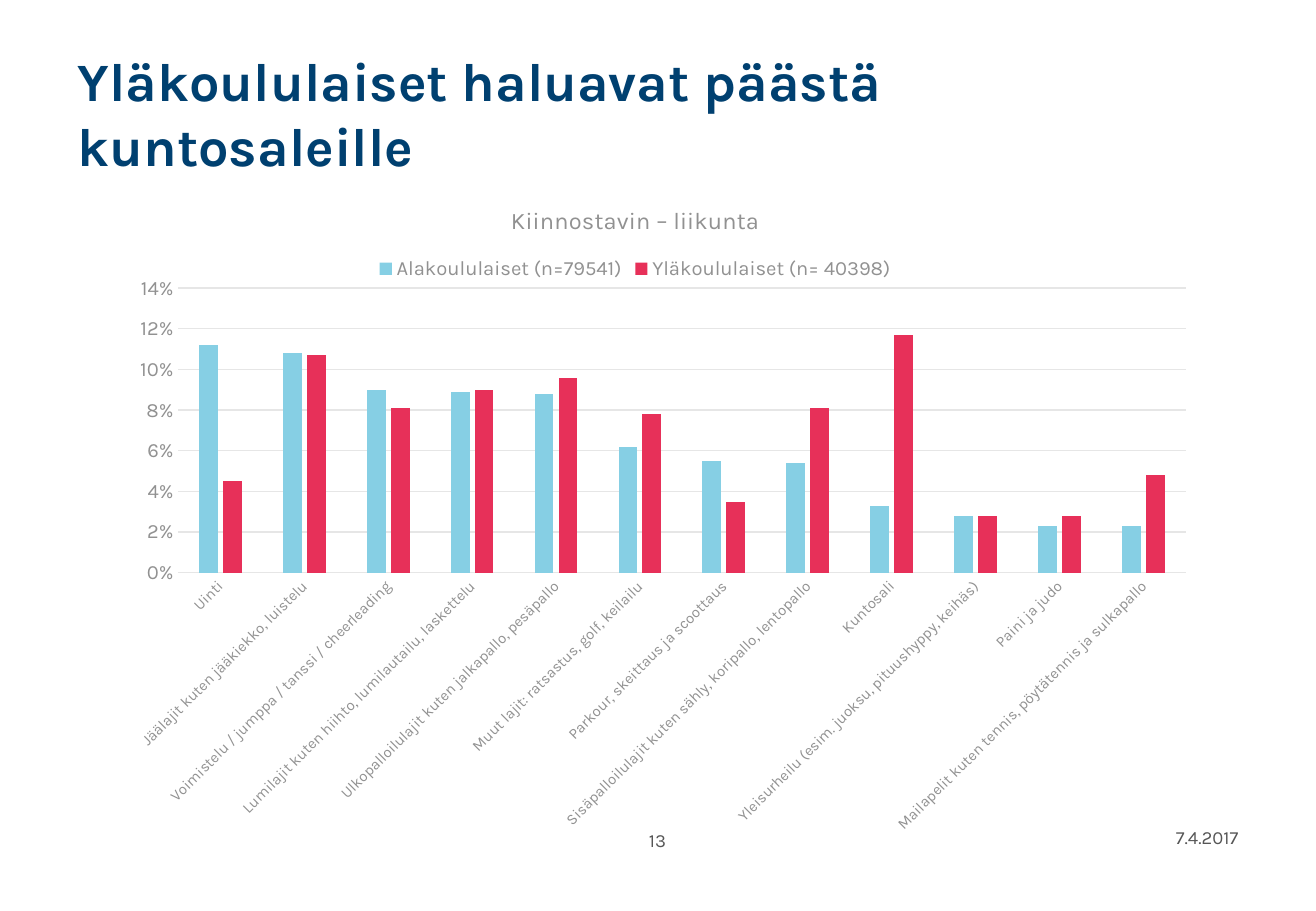
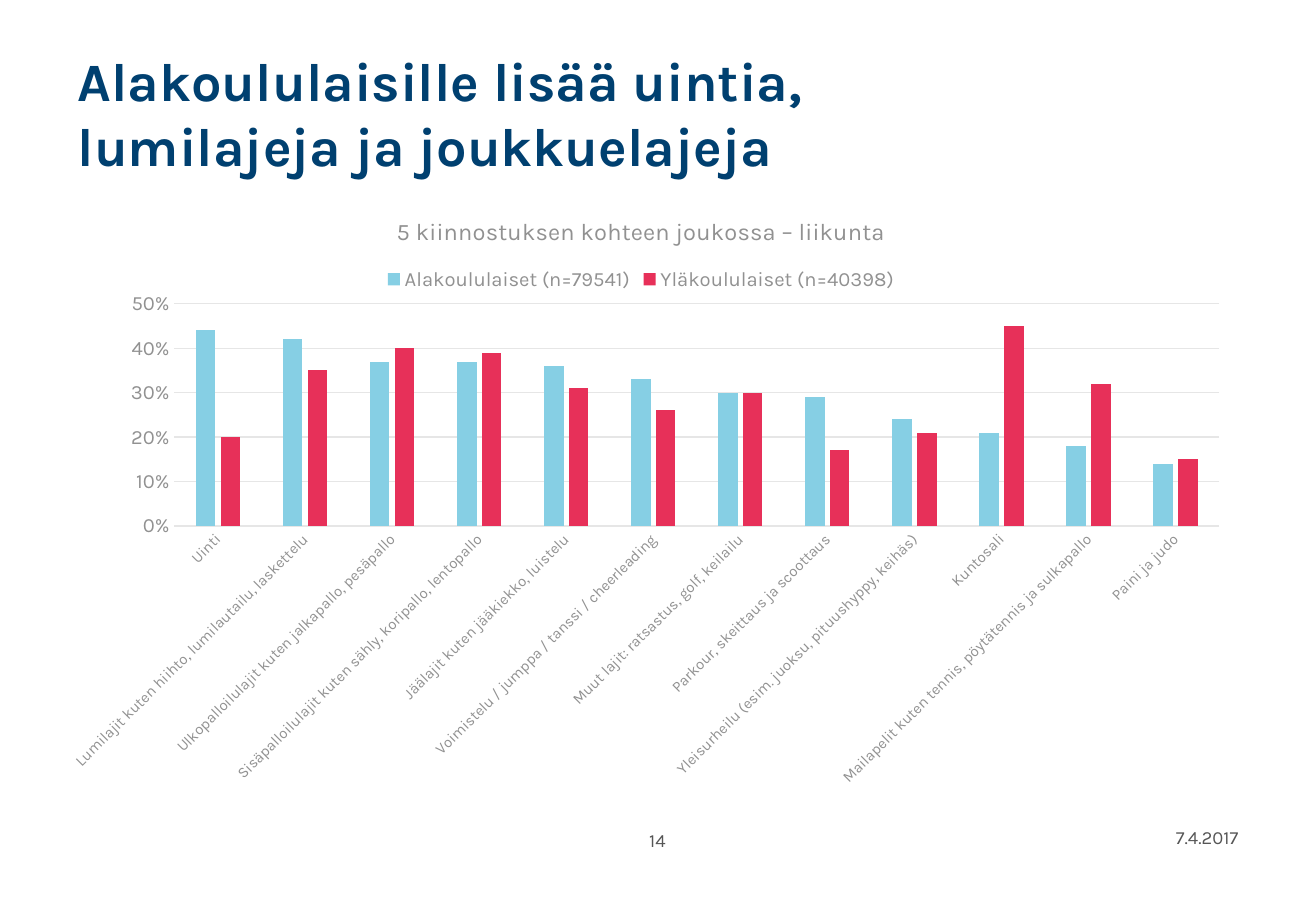
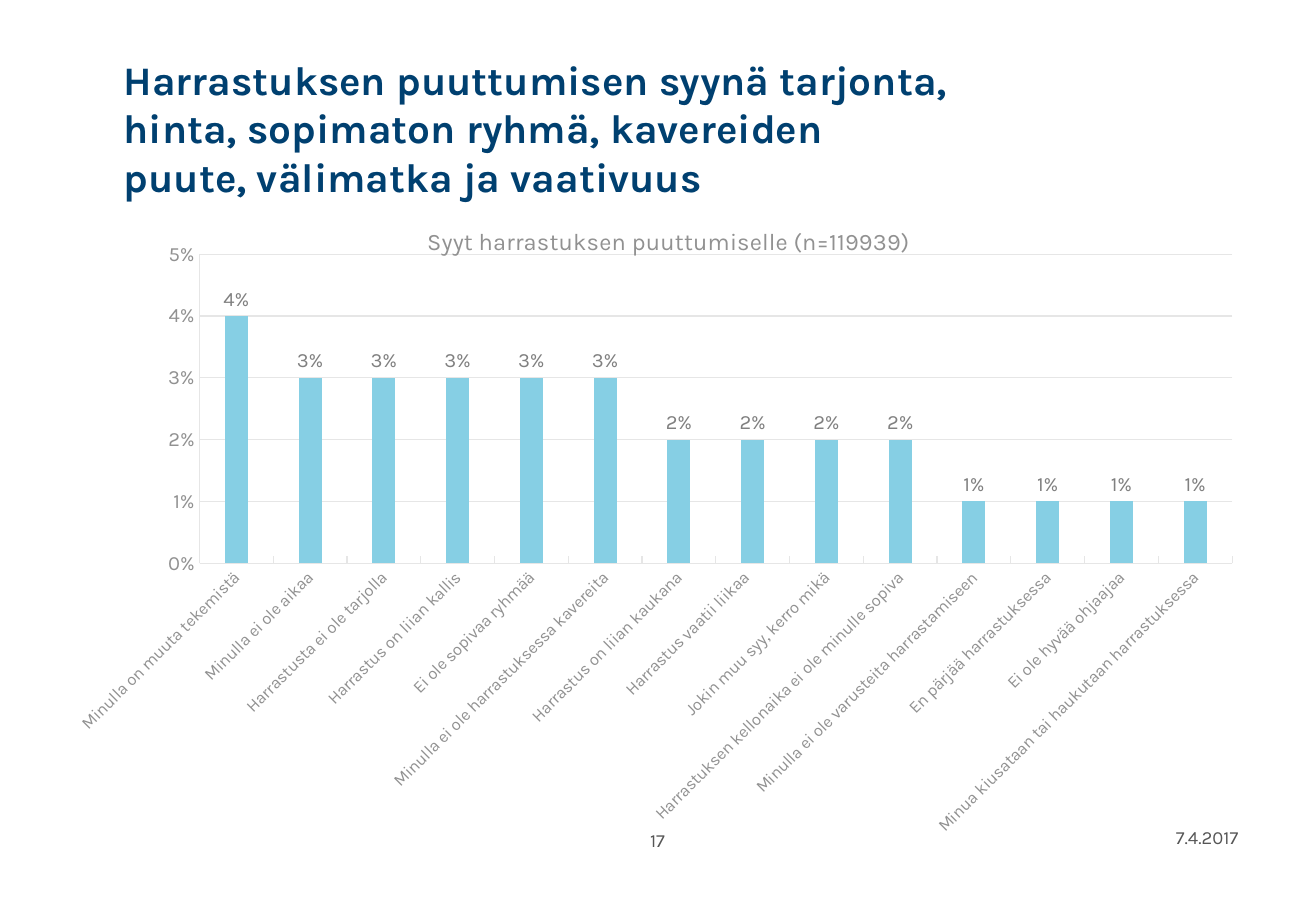
"""Build three slides of bar charts on the sports and hobbies of pupils."""
from dataclasses import dataclass
from typing import NamedTuple

from lxml import etree
from pptx import Presentation
from pptx.chart import axis as ax, chart as ch, data as cd
from pptx.dml import color, line as ln
from pptx.enum import chart as ec, text
from pptx.oxml import ns
from pptx.slide import Slide
from pptx.text import text as tx
from pptx.util import Cm, Pt


@dataclass(frozen=True)
class Theme:
    font: str = "Karla"
    navy: str = "004070"
    dark: str = "565656"
    gray: str = "919191"
    label: str = "808080"
    rule: str = "E6E6E6"
    bars: tuple[str, ...] = ("86CFE4", "E73059")
    head: int = 14
    value: int = 12
    foot: int = 11
    base: int = 10


class Box(NamedTuple):
    left: float
    top: float
    width: float
    height: float

    def lengths(self) -> list[Cm]:
        return [Cm(side) for side in self]


class Sport(NamedTuple):
    name: str
    first: tuple[float, float]
    top: tuple[float, float]


@dataclass(frozen=True)
class Graph:
    head: str
    box: Box
    plot: Box
    names: list[str]
    series: dict[str, list[float]]
    peak: float
    step: float
    size: int = 9
    single: bool = False


@dataclass(frozen=True)
class Page:
    title: str
    number: str
    graph: Graph
    box: Box = Box(1.37, 0.76, 19.25, 3.18)
    size: int = 32


THEME = Theme()
DATE = "7.4.2017"
NUMBER_BOX = Box(10.53, 17.2, 6.43, 1.02)
DATE_BOX = Box(19.71, 17.15, 6.43, 1.02)

SPORTS = [
    Sport("Uinti", (0.112, 0.045), (0.44, 0.2)),
    Sport("Jäälajit kuten jääkiekko, luistelu", (0.108, 0.107), (0.36, 0.31)),
    Sport("Voimistelu / jumppa / tanssi / cheerleading", (0.09, 0.081), (0.33, 0.26)),
    Sport("Lumilajit kuten hiihto, lumilautailu, laskettelu", (0.089, 0.09), (0.42, 0.35)),
    Sport("Ulkopalloilulajit kuten jalkapallo, pesäpallo", (0.088, 0.096), (0.37, 0.4)),
    Sport("Muut lajit: ratsastus, golf, keilailu", (0.062, 0.078), (0.3, 0.3)),
    Sport("Parkour, skeittaus ja scoottaus", (0.055, 0.035), (0.29, 0.17)),
    Sport("Sisäpalloilulajit kuten sähly, koripallo, lentopallo", (0.054, 0.081), (0.37, 0.39)),
    Sport("Kuntosali", (0.033, 0.117), (0.21, 0.45)),
    Sport("Yleisurheilu (esim. juoksu, pituushyppy, keihäs)", (0.028, 0.028), (0.24, 0.21)),
    Sport("Paini ja judo", (0.023, 0.028), (0.14, 0.15)),
    Sport("Mailapelit kuten tennis, pöytätennis ja sulkapallo", (0.023, 0.048), (0.18, 0.32)),
]
RANKED = sorted(SPORTS, key=lambda sport: -sport.top[0])

REASONS = {
    "Minulla on muuta tekemistä": 0.04,
    "Minulla ei ole aikaa": 0.03,
    "Harrastusta ei ole tarjolla": 0.03,
    "Harrastus on liian kallis": 0.03,
    "Ei ole sopivaa ryhmää": 0.03,
    "Minulla ei ole harrastuksessa kavereita": 0.03,
    "Harrastus on liian kaukana": 0.02,
    "Harrastus vaatii liikaa\n": 0.02,
    "Jokin muu syy, kerro mikä": 0.02,
    "Harrastuksen kellonaika ei ole minulle sopiva": 0.02,
    "Minulla ei ole varusteita harrastamiseen": 0.01,
    "En pärjää harrastuksessa": 0.01,
    "Ei ole hyvää ohjaajaa": 0.01,
    "Minua kiusataan tai haukutaan harrastuksessa": 0.01,
}

PAGES = [
    Page(
        "Yläkoululaiset haluavat päästä kuntosaleille", "13",
        Graph(
            "Kiinnostavin – liikunta",
            Box(1.37, 3.79, 23.82, 13.97), Box(0.099, 0.16, 0.884, 0.426),
            [sport.name for sport in SPORTS],
            {"Alakoululaiset (n=79541)": [sport.first[0] for sport in SPORTS],
             "Yläkoululaiset (n= 40398)": [sport.first[1] for sport in SPORTS]},
            peak=0.14, step=0.02,
        ),
    ),
    Page(
        "Alakoululaisille lisää uintia, lumilajeja ja joukkuelajeja", "14",
        Graph(
            "5 kiinnostuksen kohteen joukossa – liikunta",
            Box(0.99, 4.01, 24.82, 13.87), Box(0.107, 0.169, 0.88, 0.335),
            [sport.name for sport in RANKED],
            {"Alakoululaiset (n=79541)": [sport.top[0] for sport in RANKED],
             "Yläkoululaiset (n=40398)": [sport.top[1] for sport in RANKED]},
            peak=0.5, step=0.1,
        ),
    ),
    Page(
        "Harrastuksen puuttumisen syynä tarjonta, hinta, sopimaton ryhmä, "
        "kavereiden puute, välimatka ja vaativuus", "17",
        Graph(
            "Syyt harrastuksen puuttumiselle (n=119939) ",
            Box(1.19, 4.24, 25.7, 13.61), Box(0.116, 0.079, 0.84, 0.475),
            list(REASONS), {"Series 1": list(REASONS.values())},
            peak=0.05, step=0.01, size=10, single=True,
        ),
        Box(2.33, 1.08, 17.78, 3.18), 24,
    ),
]


def style(font: tx.Font, size: int, tint: str, bold: bool = False) -> None:
    """Set the face, size, colour and weight of a font."""
    font.name, font.size, font.bold = THEME.font, Pt(size), bold
    font.color.rgb = color.RGBColor.from_string(tint)


def rule(line: ln.LineFormat) -> None:
    """Give a chart line the shared thin grey look."""
    line.width = Pt(0.75)
    line.color.rgb = color.RGBColor.from_string(THEME.rule)


def add_title(slide: Slide, page: Page) -> None:
    """Place and fill the title placeholder."""
    title = slide.shapes.title
    title.left, title.top, title.width, title.height = page.box.lengths()
    frame = title.text_frame
    frame.text = page.title
    frame.word_wrap = True
    frame.auto_size = text.MSO_AUTO_SIZE.NONE
    frame.vertical_anchor = text.MSO_ANCHOR.MIDDLE
    para = frame.paragraphs[0]
    para.alignment = text.PP_ALIGN.LEFT
    style(para.font, page.size, THEME.navy, True)


def add_foot(slide: Slide, words: str, box: Box, align: text.PP_ALIGN) -> None:
    """Add one footer text."""
    frame = slide.shapes.add_textbox(*box.lengths()).text_frame
    frame.word_wrap = True
    frame.text = words
    para = frame.paragraphs[0]
    para.alignment = align
    style(para.font, THEME.foot, THEME.dark)


def set_plot(chart: ch.Chart, plot: Box) -> None:
    """Fix the inner plot area as shares of the chart."""
    area = chart.element.xpath(".//c:plotArea")[0]
    for old in area.xpath("./c:layout"):
        area.remove(old)
    layout = etree.Element(ns.qn("c:layout"))
    manual = etree.SubElement(layout, ns.qn("c:manualLayout"))
    marks = {"layoutTarget": "inner", "xMode": "edge", "yMode": "edge"}
    sides = dict(zip("xywh", plot))
    for tag, value in {**marks, **sides}.items():
        etree.SubElement(manual, ns.qn(f"c:{tag}")).set("val", str(value))
    area.insert(0, layout)


def set_names(axis: ax.CategoryAxis, chart: ch.Chart, graph: Graph) -> None:
    """Format the category axis with slanted names."""
    inside = ec.XL_TICK_MARK.INSIDE if graph.single else ec.XL_TICK_MARK.NONE
    axis.major_tick_mark = inside
    axis.minor_tick_mark = ec.XL_TICK_MARK.NONE
    axis.has_major_gridlines = False
    rule(axis.format.line)
    style(axis.tick_labels.font, graph.size, THEME.gray)
    body = chart.element.xpath(".//c:catAx/c:txPr/a:bodyPr")[0]
    body.set("rot", "-2700000")
    body.set("vert", "horz")


def set_scale(axis: ax.ValueAxis, graph: Graph) -> None:
    """Format the value axis and its grid."""
    axis.minimum_scale, axis.maximum_scale = 0, graph.peak
    axis.major_unit = graph.step
    axis.major_tick_mark = axis.minor_tick_mark = ec.XL_TICK_MARK.NONE
    axis.has_major_gridlines = True
    rule(axis.major_gridlines.format.line)
    if graph.single:
        rule(axis.format.line)
    else:
        axis.format.line.fill.background()
    labels = axis.tick_labels
    labels.number_format, labels.number_format_is_linked = "0%", False
    style(labels.font, THEME.value, THEME.gray)


def set_bars(chart: ch.Chart, graph: Graph) -> None:
    """Colour the bars, and label them when there is one series."""
    plot = chart.plots[0]
    plot.gap_width, plot.overlap, plot.vary_by_categories = 219, -27, False
    for series, tint in zip(plot.series, THEME.bars):
        series.format.fill.solid()
        series.format.fill.fore_color.rgb = color.RGBColor.from_string(tint)
        if graph.single:
            labels = series.data_labels
            labels.show_value = True
            labels.position = ec.XL_LABEL_POSITION.OUTSIDE_END
            labels.number_format, labels.number_format_is_linked = "0%", False
            style(labels.font, THEME.value, THEME.label)


def add_graph(slide: Slide, graph: Graph) -> None:
    """Add a column chart with its title, legend and axes."""
    data = cd.CategoryChartData(number_format="0%")
    data.categories = graph.names
    for name, values in graph.series.items():
        data.add_series(name, values)
    chart = slide.shapes.add_chart(
        ec.XL_CHART_TYPE.COLUMN_CLUSTERED, *graph.box.lengths(), data).chart
    style(chart.font, THEME.base, THEME.dark)
    chart.has_title = True
    head = chart.chart_title.text_frame
    head.text = graph.head
    style(head.paragraphs[0].font, THEME.head, THEME.gray)
    chart.has_legend = not graph.single
    if chart.has_legend:
        chart.legend.position = ec.XL_LEGEND_POSITION.TOP
        chart.legend.include_in_layout = False
        style(chart.legend.font, THEME.value, THEME.gray)
    set_plot(chart, graph.plot)
    set_names(chart.category_axis, chart, graph)
    set_scale(chart.value_axis, graph)
    set_bars(chart, graph)


def main() -> None:
    """Build and save the deck."""
    deck = Presentation()
    deck.slide_width, deck.slide_height = Cm(27.51), Cm(19.05)
    layout = deck.slide_layouts.get_by_name("Title Only")
    for page in PAGES:
        slide = deck.slides.add_slide(layout)
        add_title(slide, page)
        add_graph(slide, page.graph)
        add_foot(slide, page.number, NUMBER_BOX, text.PP_ALIGN.CENTER)
        add_foot(slide, DATE, DATE_BOX, text.PP_ALIGN.RIGHT)
    deck.save("out.pptx")


if __name__ == "__main__":
    main()
